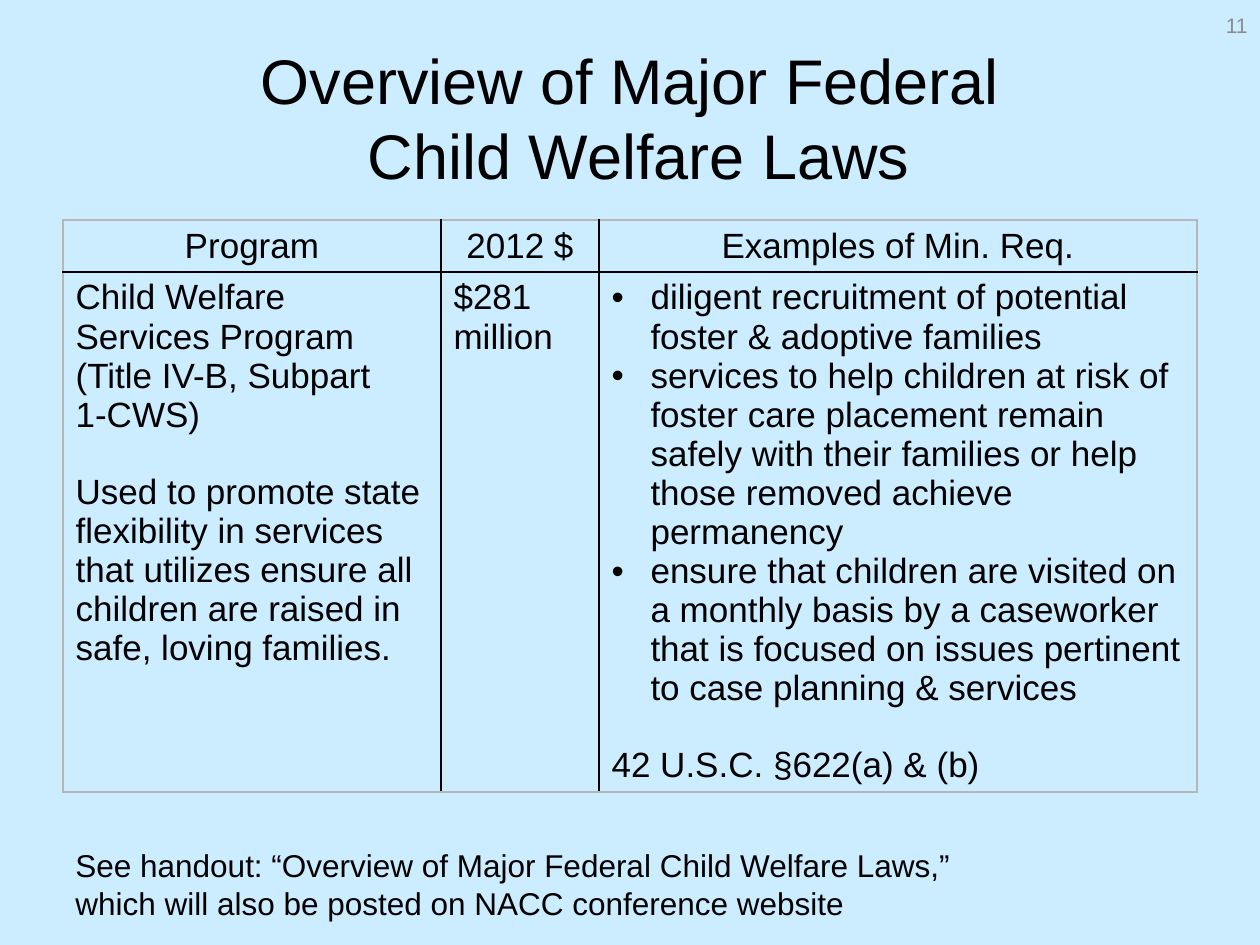
from lxml.etree import SubElement
from pptx import Presentation
from pptx.dml.color import RGBColor
from pptx.enum.text import MSO_ANCHOR, MSO_AUTO_SIZE, PP_ALIGN
from pptx.oxml.ns import qn
from pptx.util import Pt

SCALE = 7257.14
FONT = "Arial"
BLACK, GRAY, EDGE, BACK = "000000", "8C8C8C", "B7B7B7", "CCECFF"
LEFT, CENTER, RIGHT = PP_ALIGN.LEFT, PP_ALIGN.CENTER, PP_ALIGN.RIGHT
HEADS = ["Program", "2012 $", "Examples of Min. Req."]
PROGRAM = ["Child Welfare Services Program", "(Title IV-B, Subpart\n1-CWS)"]
PURPOSE = ("Used to promote state flexibility in services that utilizes ensure "
           "all children are raised in safe, loving families.")
DUTIES = [
    "diligent recruitment of potential foster & adoptive families",
    "services to help children at risk of foster care placement remain safely "
    "with their families or help those removed achieve permanency",
    "ensure that children are visited on a monthly basis by a caseworker that "
    "is focused on issues pertinent to case planning & services",
]
NOTE = ("See handout: “Overview of Major Federal Child Welfare Laws,” "
        "which will also be posted on NACC conference website")


def px(n):
    """Turn pixels into EMU."""
    return round(n * SCALE)


def color(code):
    """Turn a hex string into a colour."""
    return RGBColor.from_string(code)


def text(frame, words, size=20, ink=BLACK, align=LEFT, gap=0, bullet=False):
    """Add one formatted paragraph to a text frame."""
    para = frame.paragraphs[0]
    if para.runs:
        para = frame.add_paragraph()
    para.text = words
    para.alignment = align
    if gap:
        para.space_before = Pt(gap)
    if bullet:
        props = para._p.get_or_add_pPr()
        props.set("marL", str(px(39)))
        props.set("indent", str(px(-39)))
        SubElement(props, qn("a:buFont"), typeface=FONT)
        SubElement(props, qn("a:buChar"), char="•")
    for run in para.runs:
        run.font.name = FONT
        run.font.size = Pt(size)
        run.font.color.rgb = color(ink)


def label(slide, box, words, anchor=MSO_ANCHOR.TOP, **style):
    """Add a wrapping text box."""
    frame = slide.shapes.add_textbox(*map(px, box)).text_frame
    frame.word_wrap = True
    frame.vertical_anchor = anchor
    text(frame, words, **style)


def title(slide, box, words, **style):
    """Place and fill the title placeholder."""
    shape = slide.shapes.title
    shape.left, shape.top, shape.width, shape.height = map(px, box)
    frame = shape.text_frame
    frame.auto_size = MSO_AUTO_SIZE.NONE
    frame.vertical_anchor = MSO_ANCHOR.MIDDLE
    text(frame, words, **style)


def border(cell, sides):
    """Draw the sides of a cell in the given colours."""
    props = cell._tc.get_or_add_tcPr()
    for i, (side, ink) in enumerate(sides.items()):
        line = props.makeelement(qn("a:ln" + side), {"w": str(Pt(1))})
        fill = SubElement(line, qn("a:solidFill"))
        SubElement(fill, qn("a:srgbClr"), val=ink)
        props.insert(i, line)


def grid(slide, spot, cols, rows):
    """Add an unfilled table with grey edges and black inner lines."""
    size = sum(cols), sum(rows)
    table = slide.shapes.add_table(
        len(rows), len(cols), *map(px, spot + size)).table
    table.first_row = table.horz_banding = False
    for col, width in zip(table.columns, cols):
        col.width = px(width)
    for row, height in zip(table.rows, rows):
        row.height = px(height)
    for r in range(len(rows)):
        for c in range(len(cols)):
            cell = table.cell(r, c)
            cell.fill.background()
            outer = {"L": c == 0, "R": c == len(cols) - 1,
                     "T": r == 0, "B": r == len(rows) - 1}
            border(cell, {k: EDGE if v else BLACK for k, v in outer.items()})
    return table


def fill(table):
    """Write the program table."""
    for c, head in enumerate(HEADS):
        text(table.cell(0, c).text_frame, head, align=CENTER)
    left, mid, right = (table.cell(1, c).text_frame for c in range(3))
    for line in PROGRAM:
        text(left, line)
    text(left, PURPOSE, gap=22)
    text(mid, "$281\nmillion")
    for duty in DUTIES:
        text(right, duty, bullet=True)
    text(right, "42 U.S.C. §622(a) & (b)", gap=22)


def main():
    """Build and save the slide."""
    deck = Presentation()
    deck.slide_width, deck.slide_height = px(1260), px(945)
    slide = deck.slides.add_slide(deck.slide_layouts[5])
    back = slide.background.fill
    back.solid()
    back.fore_color.rgb = color(BACK)
    title(slide, (63, 38, 1134, 158),
          "Overview of Major Federal\n Child Welfare Laws",
          size=36, align=CENTER)
    fill(grid(slide, (63, 220), (378, 158, 598), (52, 520)))
    label(slide, (63, 840, 977, 90), NOTE, size=18)
    label(slide, (966, 0, 294, 50), "11", anchor=MSO_ANCHOR.MIDDLE,
          size=12, ink=GRAY, align=RIGHT)
    deck.save("out.pptx")


if __name__ == "__main__":
    main()
